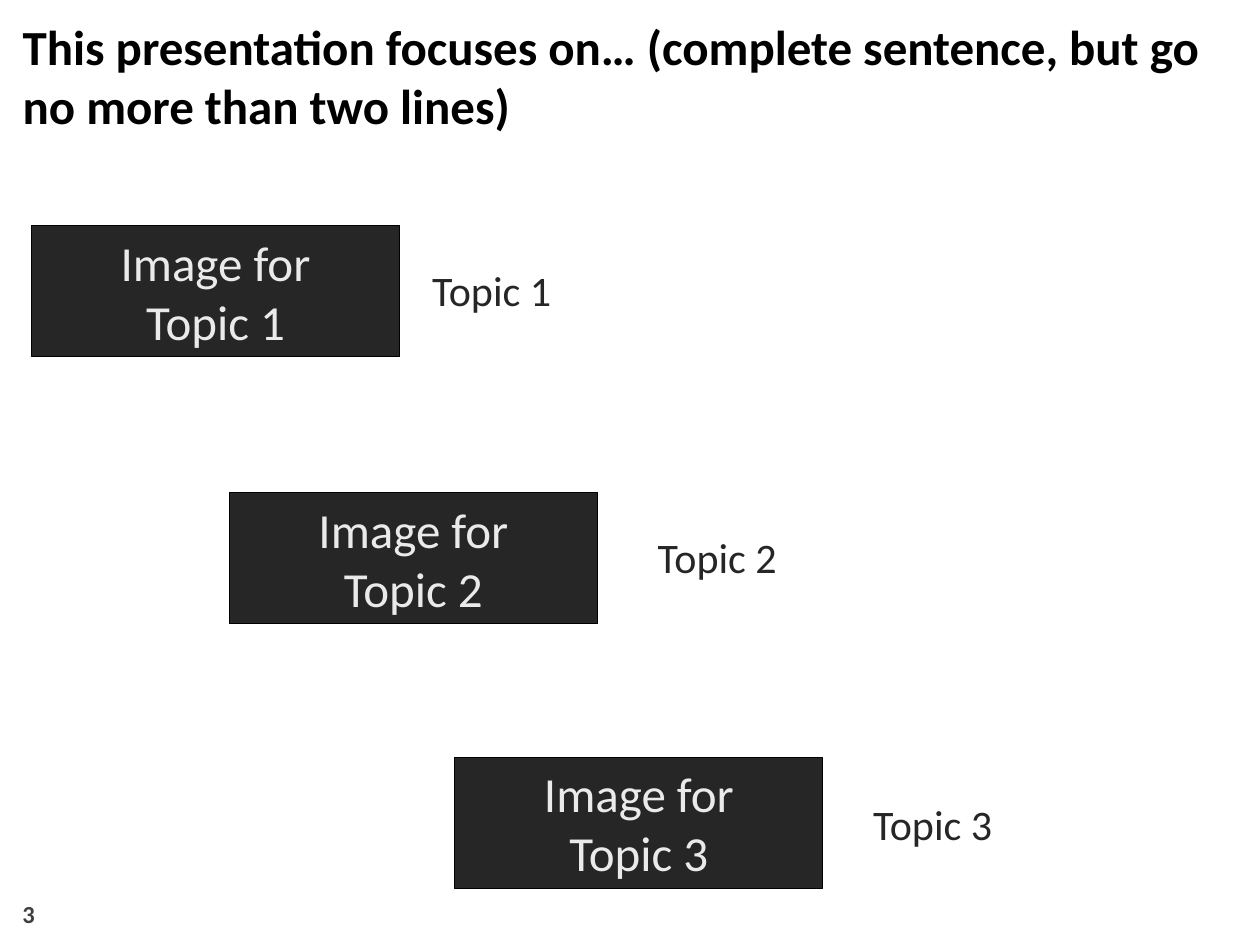
"""Build an overview slide with three topics stepping down to the right."""
from pptx import Presentation
from pptx.dml.color import RGBColor
from pptx.enum.shapes import MSO_SHAPE
from pptx.enum.text import MSO_ANCHOR, MSO_AUTO_SIZE, PP_ALIGN
from pptx.util import Inches, Pt

COLORS = {
    "title": "000000",
    "panel": "262626",
    "outline": "000000",
    "panel_text": "EAEAEA",
    "label": "262626",
    "number": "404040",
}
TOPICS = [
    ("Topic 1", 1.79, 0.25, 3.36, 2.07),
    ("Topic 2", 3.91, 1.82, 5.15, 4.19),
    ("Topic 3", 6.01, 3.61, 6.86, 6.31),
]


def color(name):
    return RGBColor.from_string(COLORS[name])


def write(frame, lines, size, color_name, bold=False, align=PP_ALIGN.LEFT, anchor=MSO_ANCHOR.TOP):
    frame.word_wrap = True
    frame.auto_size = MSO_AUTO_SIZE.NONE
    frame.vertical_anchor = anchor
    for index, line in enumerate(lines):
        para = frame.add_paragraph() if index else frame.paragraphs[0]
        para.alignment = align
        span = para.add_run()
        span.text = line
        span.font.name = "Calibri"
        span.font.size = Pt(size)
        span.font.bold = bold
        span.font.color.rgb = color(color_name)


deck = Presentation()
deck.slide_width = Inches(10)
deck.slide_height = Inches(7.5)
page = deck.slides.add_slide(deck.slide_layouts[5])

title = page.shapes.title
title.left, title.top = Inches(0.08), Inches(0.08)
title.width, title.height = Inches(9.88), Inches(1.03)
write(
    title.text_frame,
    ["This presentation focuses on… (complete sentence, but go no more than two lines)"],
    28, "title", bold=True,
)

for topic, panel_top, panel_left, label_left, label_top in TOPICS:
    label = page.shapes.add_textbox(
        Inches(label_left), Inches(label_top), Inches(1.3), Inches(0.46)
    )
    frame = label.text_frame
    frame.margin_left = frame.margin_right = Inches(0.07)
    frame.margin_top = frame.margin_bottom = Inches(0.03)
    write(frame, [topic], 24, "label")

    panel = page.shapes.add_shape(
        MSO_SHAPE.RECTANGLE,
        Inches(panel_left), Inches(panel_top), Inches(2.92), Inches(1.04),
    )
    panel.shadow.inherit = False
    panel.fill.solid()
    panel.fill.fore_color.rgb = color("panel")
    panel.line.color.rgb = color("outline")
    panel.line.width = Pt(0.75)
    write(
        panel.text_frame, ["Image for", topic], 28, "panel_text",
        align=PP_ALIGN.CENTER, anchor=MSO_ANCHOR.MIDDLE,
    )

number = page.shapes.add_textbox(Inches(0.08), Inches(7.02), Inches(2.33), Inches(0.4))
write(number.text_frame, ["3"], 14, "number", bold=True, anchor=MSO_ANCHOR.BOTTOM)

deck.save("out.pptx")
